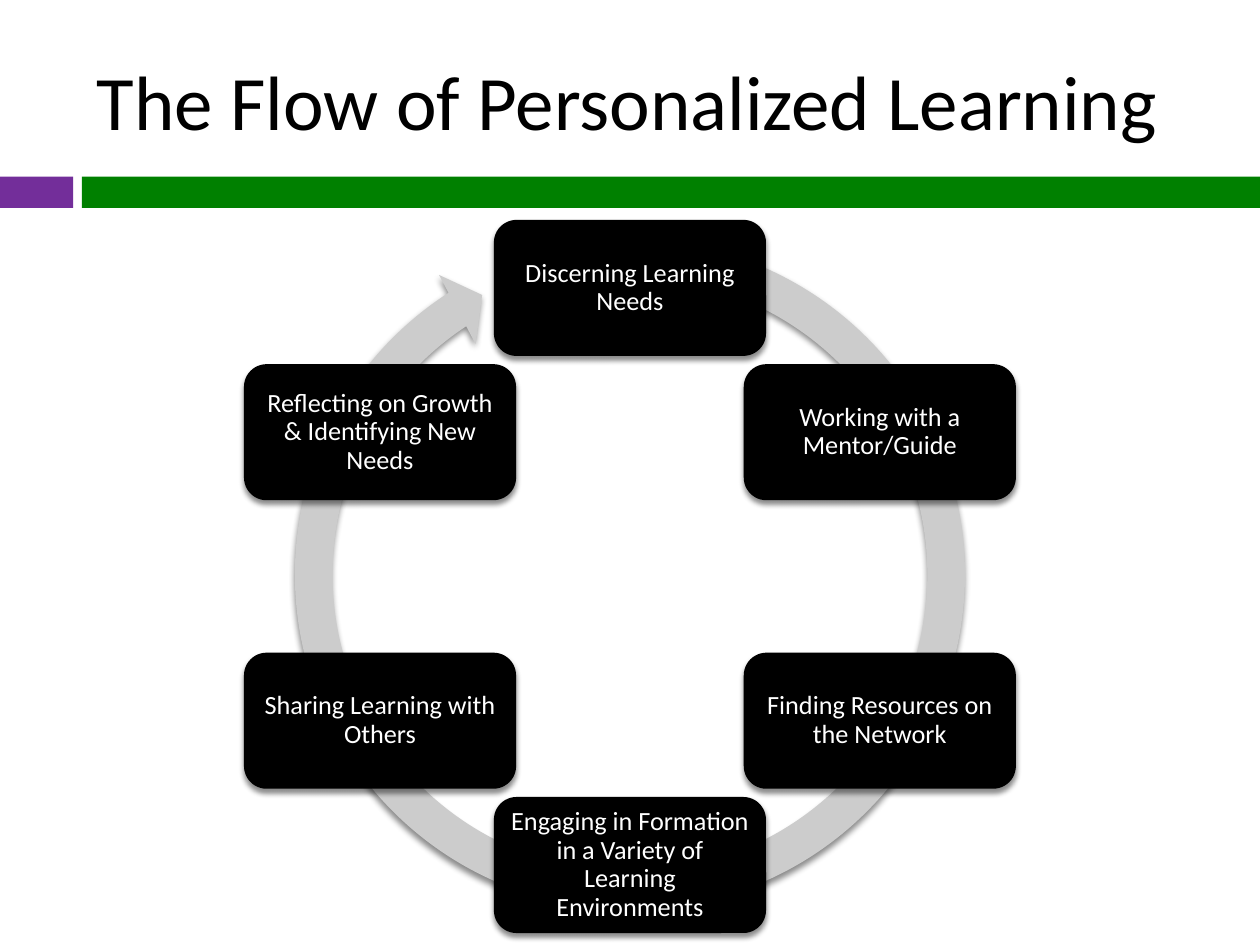
from math import cos, radians, sin

from lxml import etree
from pptx import Presentation
from pptx.dml.color import RGBColor
from pptx.enum.shapes import MSO_SHAPE
from pptx.enum.text import MSO_ANCHOR, PP_ALIGN
from pptx.oxml.ns import qn
from pptx.util import Inches, Pt

RECT = MSO_SHAPE.RECTANGLE
ROUND = MSO_SHAPE.ROUNDED_RECTANGLE
ARROW = MSO_SHAPE.CIRCULAR_ARROW
MIDDLE = MSO_ANCHOR.MIDDLE
LEFT, CENTER = PP_ALIGN.LEFT, PP_ALIGN.CENTER

WIDE, HIGH = Inches(10), Inches(7.5)
HUES = {"ink": "000000", "paper": "FFFFFF", "ring": "CCCCCC",
        "plum": "732E9A", "green": "008000"}
SHADE = {"blurRad": "38100", "dist": "30480", "dir": "5400000",
         "algn": "ctr", "rotWithShape": "0"}
TITLE = {"size": Pt(44), "name": "Calibri"}
LABEL = {"size": Pt(15), "name": "Calibri"}
FRAME = {"word_wrap": True, "vertical_anchor": MIDDLE}
INSETS = {f"margin_{side}": Inches(0.06)
          for side in ("left", "top", "right", "bottom")}
MID = (0.5, 0.61)
RADIUS = Inches(2.29)
CARD = (0.216, 0.144)
BEND = (0.053, 3.126, 142.156, 171.343, 0.055)
STEPS = (
    "Discerning Learning Needs",
    "Working with a Mentor/Guide",
    "Finding Resources on the Network",
    "Engaging in Formation in a Variety of Learning Environments",
    "Sharing Learning with Others",
    "Reflecting on Growth & Identifying New Needs",
)


def apply(item, values):
    """Set each named value on the item."""
    for name, value in values.items():
        setattr(item, name, value)


def place(x, y, w, h):
    """Turn shares of the slide into lengths."""
    return [round(part) for part in (x * WIDE, y * HIGH, w * WIDE, h * HIGH)]


def center(x, y, w, h):
    """Place a box by its middle point."""
    return place(x - w / 2, y - h / 2, w, h)


def draw(slide, kind, box, hue):
    """Add a flat filled shape."""
    shape = slide.shapes.add_shape(kind, *box)
    shape.shadow.inherit = False
    shape.fill.solid()
    shape.fill.fore_color.rgb = RGBColor.from_string(HUES[hue])
    shape.line.fill.background()
    return shape


def shade(shape):
    """Give the shape a soft shadow below it."""
    effects = shape._element.spPr.find(qn("a:effectLst"))
    outer = etree.SubElement(effects, qn("a:outerShdw"), SHADE)
    color = etree.SubElement(outer, qn("a:srgbClr"), val=HUES["ink"])
    etree.SubElement(color, qn("a:alpha"), val="45000")


def write(shape, text, font, hue, frame, align, space=1.0):
    """Fill the shape with one formatted paragraph."""
    apply(shape.text_frame, frame)
    line = shape.text_frame.paragraphs[0]
    line.text = text
    apply(line, {"alignment": align, "line_spacing": space})
    apply(line.font, font)
    line.font.color.rgb = RGBColor.from_string(HUES[hue])


def head(slide):
    """Add the title and the two bars below it."""
    draw(slide, RECT, place(0, 0.187, 0.058, 0.033), "plum")
    draw(slide, RECT, place(0.065, 0.187, 0.935, 0.033), "green")
    box = slide.shapes.add_textbox(*place(0.067, 0.033, 0.92, 0.144))
    write(box, "The Flow of Personalized Learning", TITLE, "ink", FRAME, LEFT)


def ring(slide):
    """Add the round arrow behind the steps."""
    arrow = draw(slide, ARROW, center(0.5, 0.608, 0.564, 0.752), "ring")
    for index, value in enumerate(BEND):
        arrow.adjustments[index] = value
    shade(arrow)


def cycle(slide):
    """Set the steps clockwise at equal angles."""
    for index, text in enumerate(STEPS):
        turn = radians(360 * index / len(STEPS))
        x = MID[0] + RADIUS * sin(turn) / WIDE
        y = MID[1] - RADIUS * cos(turn) / HIGH
        card = draw(slide, ROUND, center(x, y, *CARD), "ink")
        shade(card)
        write(card, text, LABEL, "paper", FRAME | INSETS, CENTER, 0.9)


def main():
    """Build and save the slide."""
    deck = Presentation()
    apply(deck, {"slide_width": WIDE, "slide_height": HIGH})
    slide = deck.slides.add_slide(deck.slide_layouts[6])
    head(slide)
    ring(slide)
    cycle(slide)
    deck.save("out.pptx")


if __name__ == "__main__":
    main()
